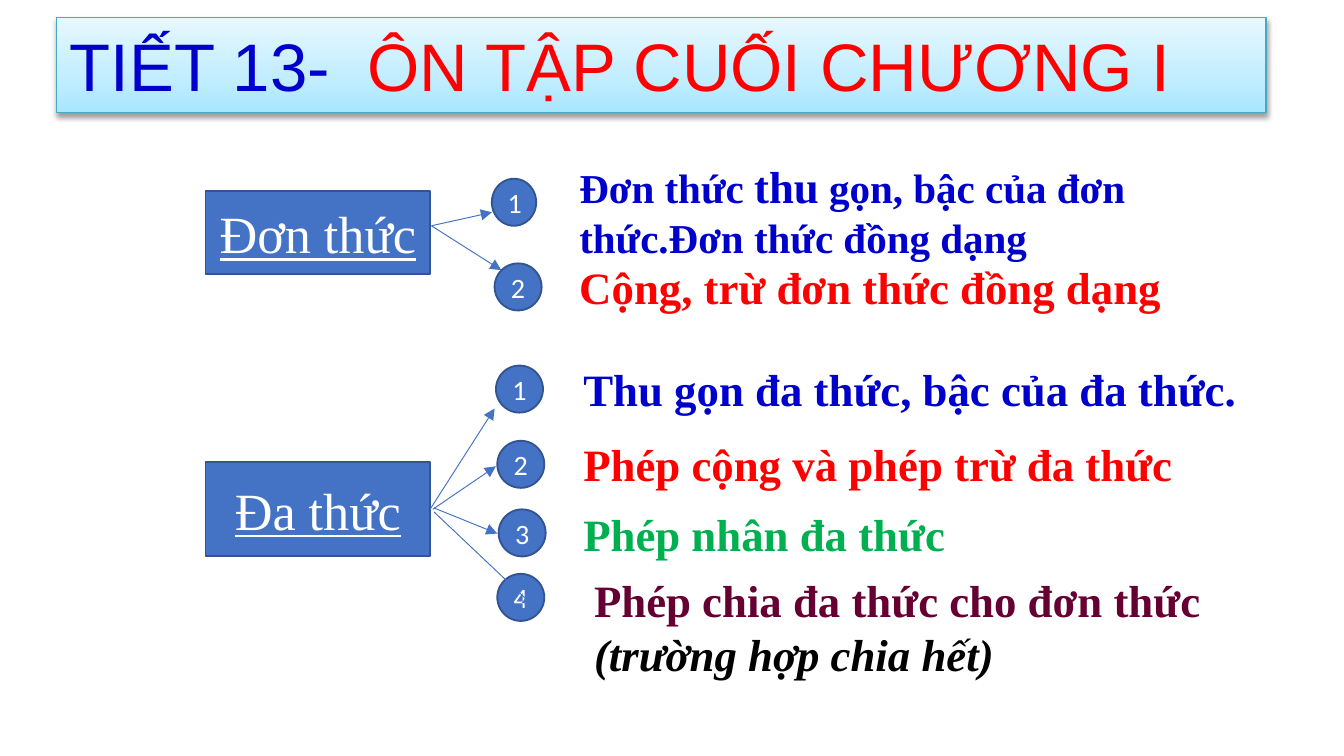
from copy import deepcopy
from typing import NamedTuple

from lxml import etree
from pptx import Presentation
from pptx import util as u
from pptx.dml.color import RGBColor
from pptx.enum import shapes, text
from pptx.oxml.ns import qn

PX = 9144  # EMU in one px, 100 px to the inch
SERIF = "Times New Roman"
BLUE, RED, WHITE = "0000CC", "FF0000", "FFFFFF"
FILL, EDGE = "4472C4", "325491"


class Run(NamedTuple):
    words: str
    size: float = 24
    color: str = BLUE
    italic: bool = False
    gap: int = 0  # extra letter spacing, in points


class Box(NamedTuple):
    x: int
    y: int
    w: int
    h: int


class Topic(NamedTuple):
    name: str
    box: Box


class Item(NamedTuple):
    num: str
    dot: Box
    label: Box
    paras: list[list[Run]]


class Arrow(NamedTuple):
    x1: int
    y1: int
    x2: int
    y2: int


TOPICS = [
    Topic("Đơn thức", Box(153, 142, 167, 62)),
    Topic("Đa thức", Box(153, 344, 167, 70)),
]
ITEMS = [
    Item("1", Box(366, 133, 33, 35), Box(424, 115, 439, 84),
         [[Run("Đơn thức ", 22), Run("thu"),
           Run(" gọn, bậc của đơn thức.Đơn thức đồng dạng", 22)]]),
    Item("2", Box(368, 196, 35, 35), Box(424, 190, 467, 47),
         [[Run("Cộng, trừ đơn thức đồng dạng", color=RED)]]),
    Item("1", Box(369, 272, 35, 35), Box(427, 266, 515, 47),
         [[Run("Thu gọn đa thức, bậc của đa thức.")]]),
    Item("2", Box(370, 328, 35, 35), Box(427, 322, 492, 47),
         [[Run("Phép cộng và phép trừ đa thức", color=RED)]]),
    Item("3", Box(371, 379, 35, 35), Box(427, 374, 417, 47),
         [[Run("Phép nhân đa thức", color="00B050")]]),
    Item("4", Box(370, 427, 35, 35), Box(435, 423, 484, 88),
         [[Run("Phép chia đa thức cho đơn thức", color="660033")],
          [Run("(trường hợp chia hết)", color="000000", italic=True)]]),
]
ARROWS = [
    Arrow(321, 168, 366, 158), Arrow(321, 168, 373, 201),
    Arrow(320, 379, 368, 304), Arrow(322, 379, 369, 347),
    Arrow(323, 378, 370, 397), Arrow(323, 381, 397, 451),
]
TITLE = [[Run("TIẾT 13-", 36), Run(" ", 36, gap=10),
          Run("ÔN TẬP CUỐI CHƯƠNG I", 36, RED)]]


def emu(*px: int) -> list[int]:
    return [n * PX for n in px]


def rgb(code: str) -> RGBColor:
    return RGBColor.from_string(code)


def write(shape, paras: list[list[Run]], *, font: str = SERIF, bold: bool = False,
          under: bool = False, center: bool = False, pad: tuple[int, int] = (7, 3),
          grow: bool = False) -> None:
    frame = shape.text_frame
    frame.word_wrap = True
    frame.margin_left = frame.margin_right = pad[0] * PX
    frame.margin_top = frame.margin_bottom = pad[1] * PX
    frame.vertical_anchor = text.MSO_ANCHOR.MIDDLE if center else text.MSO_ANCHOR.TOP
    frame.auto_size = (text.MSO_AUTO_SIZE.SHAPE_TO_FIT_TEXT if grow
                       else text.MSO_AUTO_SIZE.NONE)
    for i, runs in enumerate(paras):
        para = frame.add_paragraph() if i else frame.paragraphs[0]
        para.alignment = text.PP_ALIGN.CENTER if center else text.PP_ALIGN.LEFT
        for run in runs:
            part = para.add_run()
            part.text = run.words
            face = part.font
            face.name, face.size = font, u.Pt(run.size)
            face.bold, face.italic, face.underline = bold, run.italic, under
            face.color.rgb = rgb(run.color)
            if run.gap:
                part._r.get_or_add_rPr().set("spc", str(run.gap * 100))


def add_node(slide, kind, box: Box):
    node = slide.shapes.add_shape(kind, *emu(*box))
    node.shadow.inherit = False
    node.fill.solid()
    node.fill.fore_color.rgb = rgb(FILL)
    node.line.color.rgb = rgb(EDGE)
    node.line.width = u.Pt(1)
    return node


def add_topic(slide, topic: Topic) -> None:
    node = add_node(slide, shapes.MSO_SHAPE.RECTANGLE, topic.box)
    write(node, [[Run(topic.name, 28, WHITE)]], under=True, center=True)


def add_item(slide, item: Item) -> None:
    dot = add_node(slide, shapes.MSO_SHAPE.FLOWCHART_CONNECTOR, item.dot)
    write(dot, [[Run(item.num, 15, WHITE)]], font="Calibri", center=True)
    label = slide.shapes.add_textbox(*emu(*item.label))
    write(label, item.paras, bold=True, grow=True)


def add_arrow(slide, arrow: Arrow) -> None:
    line = slide.shapes.add_connector(shapes.MSO_CONNECTOR.STRAIGHT, *emu(*arrow))
    line.line.color.rgb = rgb(FILL)
    line.line.width = u.Pt(0.5)
    etree.SubElement(line.line._get_or_add_ln(), qn("a:tailEnd"), type="triangle")
    etree.SubElement(line._element.spPr, qn("a:effectLst"))


def set_title(slide) -> None:
    title = slide.shapes.title
    title.left, title.top, title.width, title.height = emu(42, 13, 900, 71)
    write(title, TITLE, font="Arial", pad=(10, 5))
    # Three-stop gradient, running upwards
    fill = title.fill
    fill.gradient()
    fill.gradient_angle = 90
    props = title._element.spPr
    stops = props.find(".//" + qn("a:gsLst"))
    stops.append(deepcopy(stops[-1]))
    shades = [(0, "A7E6FF"), (0.35, "C1EDFF"), (1, "E7F8FF")]
    for stop, (place, shade) in zip(fill.gradient_stops, shades):
        stop.position = place
        stop.color.rgb = rgb(shade)
    title.line.color.rgb = rgb("46AAC5")
    title.line.width = u.Pt(0.75)
    # Soft shadow below
    title.shadow.inherit = False
    glow = etree.SubElement(props.find(qn("a:effectLst")), qn("a:outerShdw"),
                            blurRad=str(u.Pt(3.1)), dist=str(u.Pt(1.6)),
                            dir="5400000", rotWithShape="0")
    tint = etree.SubElement(glow, qn("a:srgbClr"), val="000000")
    etree.SubElement(tint, qn("a:alpha"), val="38000")


def main() -> None:
    deck = Presentation()
    deck.slide_width = 1000 * PX
    deck.slide_height = deck.slide_width * 9 // 16
    slide = deck.slides.add_slide(deck.slide_layouts.get_by_name("Title Only"))
    set_title(slide)
    for topic in TOPICS:
        add_topic(slide, topic)
    for item in ITEMS:
        add_item(slide, item)
    for arrow in ARROWS:
        add_arrow(slide, arrow)
    deck.save("out.pptx")


if __name__ == "__main__":
    main()
